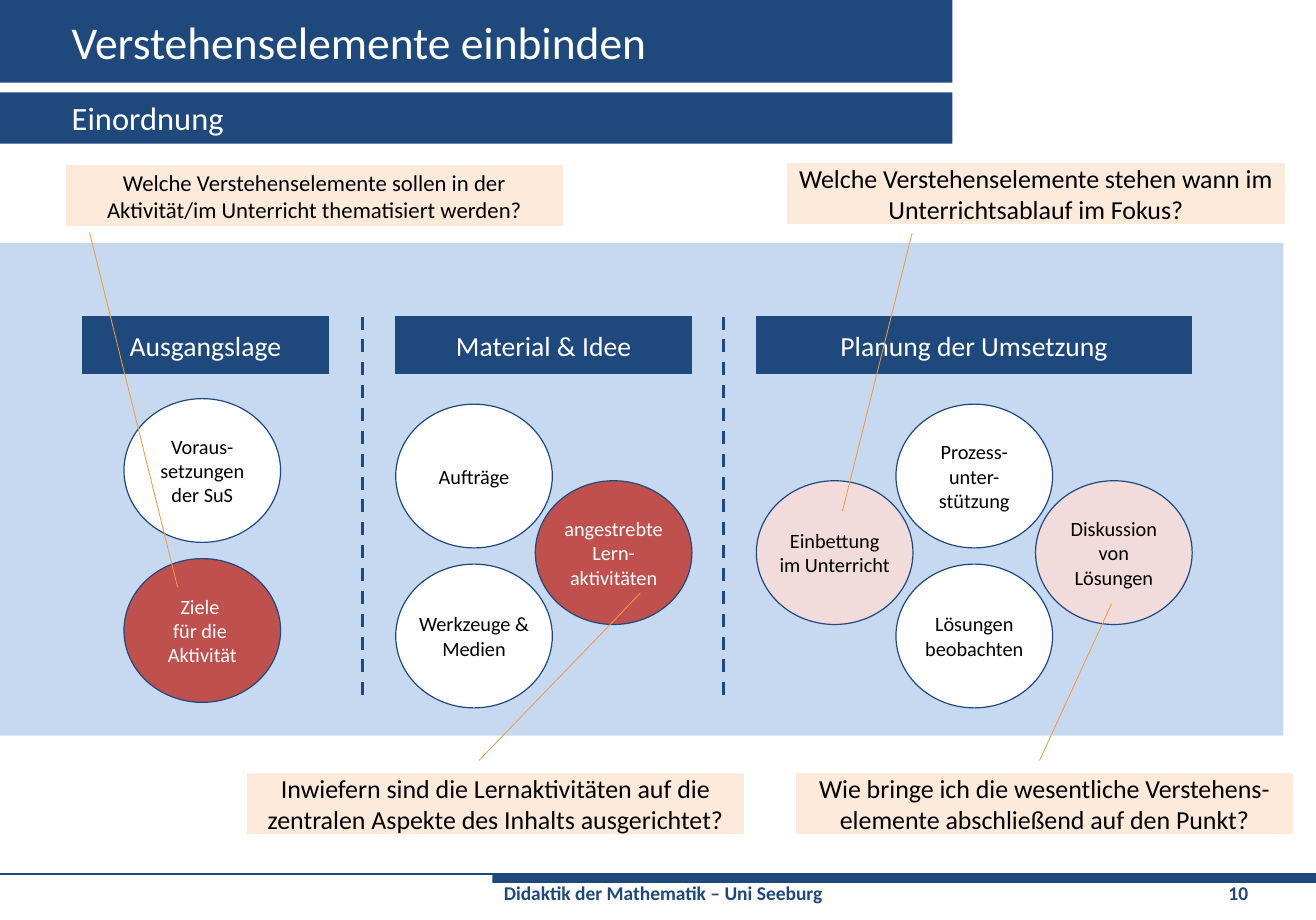
from dataclasses import dataclass

from lxml import etree
from pptx import Presentation
from pptx.dml.color import RGBColor
from pptx.enum.dml import MSO_LINE
from pptx.enum.shapes import MSO_CONNECTOR, MSO_SHAPE
from pptx.enum.text import MSO_ANCHOR, PP_ALIGN
from pptx.oxml.ns import qn
from pptx.shapes.autoshape import Shape
from pptx.slide import Slide
from pptx.util import Pt

RECTANGLE = MSO_SHAPE.RECTANGLE
OVAL = MSO_SHAPE.OVAL
CALLOUT = MSO_SHAPE.LINE_CALLOUT_1_NO_BORDER
STRAIGHT = MSO_CONNECTOR.STRAIGHT
DASH = MSO_LINE.DASH
CENTER, LEFT = PP_ALIGN.CENTER, PP_ALIGN.LEFT
MIDDLE, TOP = MSO_ANCHOR.MIDDLE, MSO_ANCHOR.TOP

NAVY = RGBColor(0x1F, 0x49, 0x7D)
LIGHT_BLUE = RGBColor(0xC6, 0xD9, 0xF1)
RED = RGBColor(0xC0, 0x50, 0x4D)
PINK = RGBColor(0xF2, 0xDC, 0xDB)
PEACH = RGBColor(0xFD, 0xEA, 0xDA)
ORANGE = RGBColor(0xF7, 0x96, 0x46)
WHITE = RGBColor(0xFF, 0xFF, 0xFF)
BLACK = RGBColor(0, 0, 0)

FONT = "Calibri"
SLIDE_WIDTH, SLIDE_HEIGHT = 810.75, 567
BAR_WIDTH = 586.8
FOOTER_LEFT, FOOTER_TOP = 303.3, 538.5
FOOTER_WIDTH = SLIDE_WIDTH - FOOTER_LEFT
HEADER_TOP, HEADER_HEIGHT = 195.1, 35.3
DIVIDER_BOTTOM = 433.4
CIRCLE_WIDTH, CIRCLE_HEIGHT = 96.5, 88.6
COLUMN_STEP, ROW_STEP = 86, 98.6
UPPER_ROW, SIDE_ROW = 249.1, 296.3
LOWER_ROW = UPPER_ROW + ROW_STEP
START_ROW = 245.7
START, MATERIAL, PLAN = 50.6, 243.8, 466
START_CIRCLES = 76.4
CALLOUT_WIDTH, CALLOUT_HEIGHT = 306.4, 37.4
CALLOUT_BOTTOM_ROW = 476.6


@dataclass
class Header:
    text: str
    left: float
    width: float


@dataclass
class Circle:
    text: str
    left: float
    top: float
    fill: RGBColor = WHITE
    color: RGBColor = BLACK


@dataclass
class Question:
    """A callout; pointer holds start y, start x, end y, end x as shares of the box."""
    text: str
    left: float
    top: float
    pointer: tuple[float, float, float, float]
    size: float = 16


HEADERS = [
    Header("Ausgangslage", START, 151.9),
    Header("Material & Idee", MATERIAL, 182.2),
    Header("Planung der Umsetzung", PLAN, 268.3),
]
DIVIDERS = [223.2, 445.7]
CIRCLES = [
    Circle("angestrebte\vLern-aktivitäten", MATERIAL + COLUMN_STEP, SIDE_ROW, RED, WHITE),
    Circle("Werkzeuge & Medien", MATERIAL, LOWER_ROW),
    Circle("Aufträge", MATERIAL, UPPER_ROW),
    Circle("Einbettung\nim Unterricht", PLAN, SIDE_ROW, PINK),
    Circle("Prozess-\vunter-stützung", PLAN + COLUMN_STEP, UPPER_ROW),
    Circle("Diskussion von Lösungen", PLAN + 2 * COLUMN_STEP, SIDE_ROW, PINK),
    Circle("Lösungen beobachten", PLAN + COLUMN_STEP, LOWER_ROW),
    Circle("Ziele \vfür die \vAktivität", START_CIRCLES, START_ROW + ROW_STEP, RED, WHITE),
    Circle("Voraus-setzungen\nder SuS", START_CIRCLES, START_ROW),
]
QUESTIONS = [
    Question("Welche Verstehenselemente stehen wann im Unterrichtsablauf im Fokus?",
             485, 100.5, (1.155, 0.251, 5.739, 0.111)),
    Question("Inwiefern sind die Lernaktivitäten auf die zentralen Aspekte des Inhalts ausgerichtet?",
             152.1, CALLOUT_BOTTOM_ROW, (-0.214, 0.467, -2.968, 0.791)),
    Question("Wie bringe ich die wesentliche Verstehens-elemente abschließend auf den Punkt?",
             490.3, CALLOUT_BOTTOM_ROW, (-0.211, 0.49, -2.797, 0.635)),
    Question("Welche Verstehenselemente sollen in der Aktivität/im Unterricht thematisiert werden?",
             40.5, 101.9, (1.108, 0.048, 6.957, 0.225), 14),
]


def write_text(shape: Shape, text: str, size: float, color: RGBColor,
               alignment: PP_ALIGN = CENTER, anchor: MSO_ANCHOR = MIDDLE,
               bold: bool = False) -> None:
    frame = shape.text_frame
    frame.word_wrap = True
    frame.vertical_anchor = anchor
    frame.text = text
    for paragraph in frame.paragraphs:
        paragraph.alignment = alignment
        for run in paragraph.runs:
            run.font.name = FONT
            run.font.size = Pt(size)
            run.font.bold = bold
            run.font.color.rgb = color


def add_filled(slide: Slide, kind: MSO_SHAPE, left: float, top: float, width: float,
               height: float, fill: RGBColor, line: RGBColor | None = None,
               line_width: float = 0.75) -> Shape:
    """Add a flat preset shape, without outline unless a line colour is given."""
    shape = slide.shapes.add_shape(kind, Pt(left), Pt(top), Pt(width), Pt(height))
    shape.shadow.inherit = False
    shape.fill.solid()
    shape.fill.fore_color.rgb = fill
    if line is None:
        shape.line.fill.background()
    else:
        shape.line.color.rgb = line
        shape.line.width = Pt(line_width)
    return shape


def add_line(slide: Slide, x1: float, y1: float, x2: float, y2: float,
             width: float, dash: MSO_LINE | None = None) -> None:
    line = slide.shapes.add_connector(STRAIGHT, Pt(x1), Pt(y1), Pt(x2), Pt(y2))
    line.line.color.rgb = NAVY
    line.line.width = Pt(width)
    line.line.dash_style = dash
    etree.SubElement(line._element.spPr, qn("a:effectLst"))


def add_text_box(slide: Slide, left: float, top: float, width: float, height: float) -> Shape:
    return slide.shapes.add_textbox(Pt(left), Pt(top), Pt(width), Pt(height))


def add_footer(slide: Slide) -> None:
    add_line(slide, 0, FOOTER_TOP, SLIDE_WIDTH, FOOTER_TOP, 1)
    add_filled(slide, RECTANGLE, FOOTER_LEFT, FOOTER_TOP, FOOTER_WIDTH, 5.7, NAVY)
    box = add_text_box(slide, FOOTER_LEFT, 539.3, FOOTER_WIDTH, 22.3)
    write_text(box, "Didaktik der Mathematik – Uni Seeburg\t10", 12, NAVY, LEFT, TOP, bold=True)
    properties = box.text_frame.paragraphs[0]._p.get_or_add_pPr()
    tabs = etree.SubElement(properties, qn("a:tabLst"))
    etree.SubElement(tabs, qn("a:tab"), pos=str(Pt(458.6)), algn="r")


def add_titles(slide: Slide) -> None:
    for text, top, height, size in (("Verstehenselemente einbinden", 0, 51, 28),
                                    ("Einordnung", 56.9, 31.7, 20)):
        add_filled(slide, RECTANGLE, 0, top, BAR_WIDTH, height, NAVY)
        box = add_text_box(slide, 37.1, top, 544.3, height)
        write_text(box, text, size, WHITE, LEFT)


def add_circle(slide: Slide, circle: Circle) -> None:
    shape = add_filled(slide, OVAL, circle.left, circle.top, CIRCLE_WIDTH, CIRCLE_HEIGHT,
                       circle.fill, NAVY)
    frame = shape.text_frame
    frame.margin_left = frame.margin_right = frame.margin_top = frame.margin_bottom = 0
    write_text(shape, circle.text, 12.5, circle.color)


def add_question(slide: Slide, question: Question) -> None:
    shape = add_filled(slide, CALLOUT, question.left, question.top, CALLOUT_WIDTH,
                       CALLOUT_HEIGHT, PEACH, ORANGE, 0.5)
    for index, share in enumerate(question.pointer):
        shape.adjustments[index] = share
    write_text(shape, question.text, question.size, BLACK)


def main() -> None:
    presentation = Presentation()
    presentation.slide_width = Pt(SLIDE_WIDTH)
    presentation.slide_height = Pt(SLIDE_HEIGHT)
    slide = presentation.slides.add_slide(presentation.slide_layouts[6])
    add_footer(slide)
    add_titles(slide)
    add_filled(slide, RECTANGLE, 0, 149.6, 790.6, 303.8, LIGHT_BLUE)
    for header in HEADERS:
        shape = add_filled(slide, RECTANGLE, header.left, HEADER_TOP, header.width,
                           HEADER_HEIGHT, NAVY, NAVY)
        write_text(shape, header.text, 17, WHITE)
    for circle in CIRCLES:
        add_circle(slide, circle)
    for x in DIVIDERS:
        add_line(slide, x, HEADER_TOP, x, DIVIDER_BOTTOM, 2, DASH)
    for question in QUESTIONS:
        add_question(slide, question)
    presentation.save("out.pptx")


if __name__ == "__main__":
    main()
